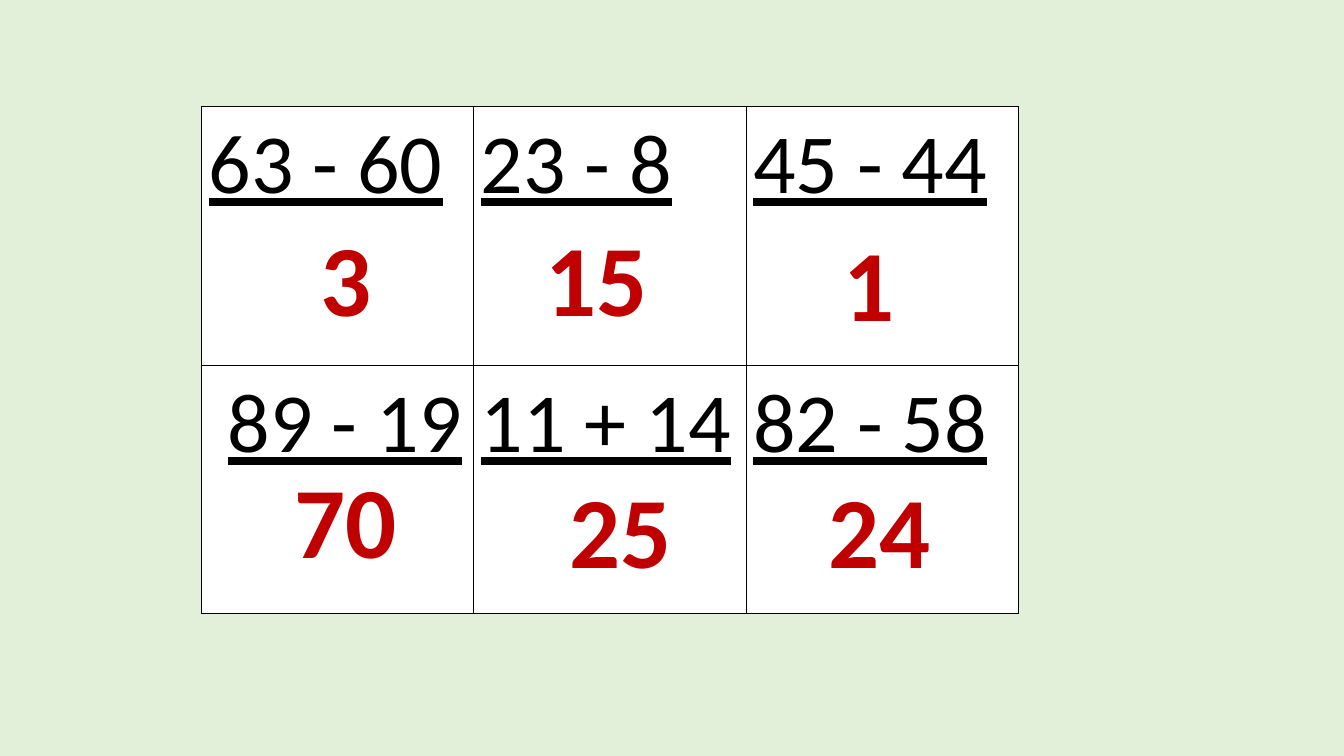
from dataclasses import dataclass

from lxml.etree import SubElement
from pptx import Presentation
from pptx.dml.color import RGBColor
from pptx.enum.text import MSO_AUTO_SIZE, PP_ALIGN
from pptx.oxml.ns import qn
from pptx.util import Inches, Pt


@dataclass(frozen=True)
class Theme:
    """Colours, font and type sizes of the slide."""
    background: str = "E2F0D9"
    paper: str = "FFFFFF"
    ink: str = "000000"
    answer: str = "C00000"
    font: str = "Calibri"
    sum_size: int = 60
    answer_size: int = 72
    border: float = 1


@dataclass(frozen=True)
class Sum:
    """A sum, its answer, and where the answer sits as shares of the cell."""
    question: str
    answer: str
    centre: float
    top: float
    indent: float = 0


THEME = Theme()
LEFT, TOP = 2, 1.06
COLUMN = 2.7
ROWS = [2.57, 2.46]
PADDING = 0.07
DIGIT, ANSWER_HEIGHT = 0.52, 1.31
SUMS = [
    [Sum("63 - 60", "3", 0.53, 0.4), Sum("23 - 8", "15", 0.45, 0.4),
     Sum("45 - 44", "1", 0.45, 0.42)],
    [Sum("89 - 19", "70", 0.53, 0.35, indent=0.19), Sum("11 + 14", "25", 0.54, 0.39),
     Sum("82 - 58", "24", 0.49, 0.39)],
]


def style_font(font, size, colour):
    """Give a font the theme's typeface with a size and colour."""
    font.name = THEME.font
    font.size = Pt(size)
    font.color.rgb = RGBColor.from_string(colour)


def add_borders(cell):
    """Draw the four borders of a cell."""
    properties = cell._tc.get_or_add_tcPr()
    for side in ("L", "R", "T", "B"):
        line = SubElement(properties, qn(f"a:ln{side}"), w=str(Pt(THEME.border)))
        SubElement(SubElement(line, qn("a:solidFill")), qn("a:srgbClr"), val=THEME.ink)


def fill_cell(cell, task):
    """Write an underlined sum in a bordered cell."""
    add_borders(cell)
    cell.fill.solid()
    cell.fill.fore_color.rgb = RGBColor.from_string(THEME.paper)
    cell.margin_left = Inches(PADDING + task.indent)
    cell.margin_right = Inches(PADDING)
    cell.margin_top = cell.margin_bottom = 0
    cell.text_frame.text = task.question
    paragraph = cell.text_frame.paragraphs[0]
    paragraph.line_spacing = 1.07
    paragraph.space_after = Pt(8)
    font = paragraph.runs[0].font
    style_font(font, THEME.sum_size, THEME.ink)
    font.underline = True
    font.bold = False


def add_sums(slide):
    """Add the table of sums."""
    columns = len(SUMS[0])
    table = slide.shapes.add_table(
        len(SUMS), columns, Inches(LEFT), Inches(TOP),
        Inches(COLUMN * columns), Inches(sum(ROWS))).table
    for column in table.columns:
        column.width = Inches(COLUMN)
    for row, height, tasks in zip(table.rows, ROWS, SUMS):
        row.height = Inches(height)
        for cell, task in zip(row.cells, tasks):
            fill_cell(cell, task)


def add_answer(slide, task, row, column):
    """Place an answer over its cell."""
    width = 0.2 + DIGIT * len(task.answer)
    left = LEFT + COLUMN * (column + task.centre) - width / 2
    top = TOP + sum(ROWS[:row]) + ROWS[row] * task.top
    frame = slide.shapes.add_textbox(
        Inches(left), Inches(top), Inches(width), Inches(ANSWER_HEIGHT)).text_frame
    frame.word_wrap = False
    frame.auto_size = MSO_AUTO_SIZE.SHAPE_TO_FIT_TEXT
    frame.text = task.answer
    paragraph = frame.paragraphs[0]
    paragraph.alignment = PP_ALIGN.CENTER
    font = paragraph.runs[0].font
    style_font(font, THEME.answer_size, THEME.answer)
    font.bold = True


def main():
    """Build the slide of sums and answers."""
    deck = Presentation()
    deck.slide_width, deck.slide_height = Inches(13.33), Inches(7.5)
    slide = deck.slides.add_slide(deck.slide_layouts[6])
    slide.background.fill.solid()
    slide.background.fill.fore_color.rgb = RGBColor.from_string(THEME.background)
    add_sums(slide)
    for row, tasks in enumerate(SUMS):
        for column, task in enumerate(tasks):
            add_answer(slide, task, row, column)
    deck.save("out.pptx")


if __name__ == "__main__":
    main()
